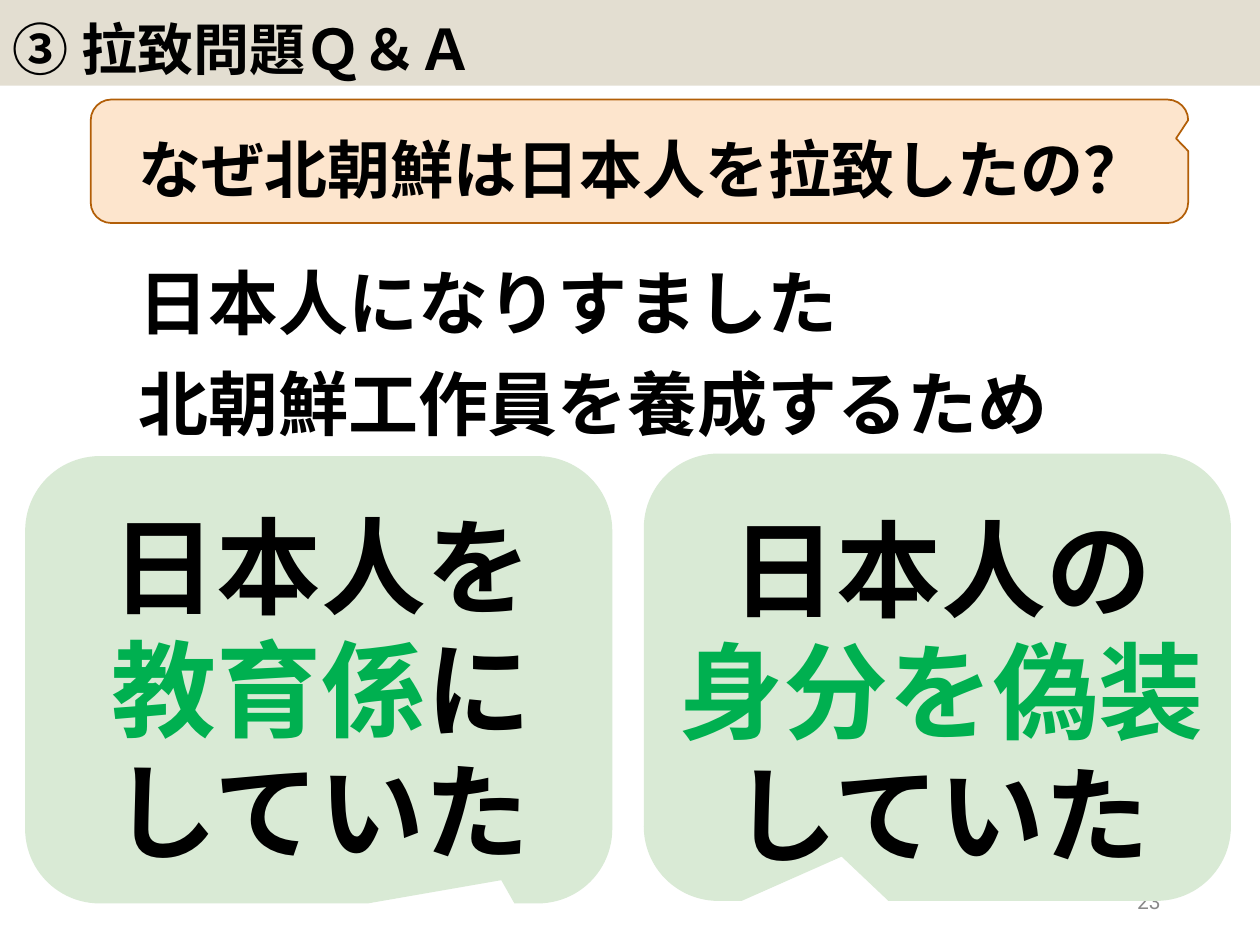
from lxml import etree
from pptx import Presentation
from pptx.dml.color import RGBColor
from pptx.enum.shapes import MSO_SHAPE
from pptx.enum.text import MSO_ANCHOR, MSO_AUTO_SIZE, PP_ALIGN
from pptx.oxml.ns import qn
from pptx.util import Inches, Pt

CALLOUT = MSO_SHAPE.ROUNDED_RECTANGULAR_CALLOUT
TOP, MIDDLE = MSO_ANCHOR.TOP, MSO_ANCHOR.MIDDLE
LEFT, CENTER, RIGHT = PP_ALIGN.LEFT, PP_ALIGN.CENTER, PP_ALIGN.RIGHT
JAPANESE, LATIN = "Noto Sans CJK JP", "Roboto"
BLACK, GREEN, PALE_GREEN = "000000", "00B050", "D9EAD5"


def color(value):
    return RGBColor.from_string(value)


def write(box, lines, size, align=LEFT, spacing=1.0, outline=False,
          font=JAPANESE, bold=True, anchor=TOP):
    frame = box.text_frame
    frame.word_wrap = True
    frame.auto_size = MSO_AUTO_SIZE.NONE
    frame.vertical_anchor = anchor
    frame.text = "\n".join("" for line in lines)
    for para, line in zip(frame.paragraphs, lines):
        para.alignment = align
        para.line_spacing = spacing
        for text, ink in line:
            span = para.add_run()
            span.text = text
            span.font.size = Pt(size)
            span.font.bold = bold
            span.font.name = font
            span.font.color.rgb = color(ink)
            properties = span.font._element
            latin = properties.find(qn("a:latin"))
            east_asian = etree.Element(qn("a:ea"), typeface=font)
            latin.addnext(east_asian)
            if outline:
                edge = etree.Element(qn("a:ln"), w=str(Pt(0.75)))
                fill = etree.SubElement(edge, qn("a:solidFill"))
                etree.SubElement(fill, qn("a:srgbClr"), val="FFFFFF")
                properties.insert(0, edge)


deck = Presentation()
deck.slide_width, deck.slide_height = Inches(10), Inches(7.5)
page = deck.slides.add_slide(deck.slide_layouts[5])

title = page.shapes.title
title.left, title.top = Inches(0), Inches(-0.04)
title.width, title.height = Inches(10), Inches(0.72)
title.fill.solid()
title.fill.fore_color.rgb = color("E3DED1")
write(title, [[("③ 拉致問題Ｑ＆Ａ", BLACK)]], 32, spacing=1.2)

page_number = page.shapes.add_textbox(Inches(7.06), Inches(6.95), Inches(2.25), Inches(0.4))
write(page_number, [[("23", "898989")]], 12, align=RIGHT, font=LATIN, bold=False, anchor=MIDDLE)

question = page.shapes.add_group_shape()
bubble = question.shapes.add_shape(CALLOUT, Inches(0.72), Inches(0.79), Inches(8.71), Inches(0.98))
bubble.adjustments[0], bubble.adjustments[1] = 0.489, -0.185
bubble.shadow.inherit = False
bubble.fill.solid()
bubble.fill.fore_color.rgb = color("FDE5CD")
bubble.line.color.rgb = color("B25E07")
bubble.line.width = Pt(1)
question_text = question.shapes.add_textbox(Inches(1), Inches(0.99), Inches(8.77), Inches(0.71))
write(question_text, [[("なぜ北朝鮮は日本人を拉致したの？", BLACK)]], 36)

reasons = [
    (0.2, 3.62, (0.311, 0.448), (0.42, 3.96, 4.26),
     [[("日本人を", BLACK)], [("教育係", GREEN), ("に", BLACK)], [("していた", BLACK)]]),
    (5.11, 3.6, (-0.163, 0.401), (5.14, 3.98, 4.66),
     [[("日本人の", BLACK)], [("身分を偽装", GREEN), ("していた", BLACK)]]),
]
for left, top, tip, (text_left, text_top, text_width), lines in reasons:
    card = page.shapes.add_shape(CALLOUT, Inches(left), Inches(top), Inches(4.66), Inches(3.55))
    card.adjustments[0], card.adjustments[1] = tip
    card.shadow.inherit = False
    card.fill.solid()
    card.fill.fore_color.rgb = color(PALE_GREEN)
    card.line.fill.background()
    reason = page.shapes.add_textbox(Inches(text_left), Inches(text_top), Inches(text_width), Inches(3.05))
    write(reason, lines, 60, align=CENTER, spacing=Pt(70), outline=True)

answer = page.shapes.add_textbox(Inches(1), Inches(1.88), Inches(7.54), Inches(1.68))
answer_lines = [[("日本人になりすました", BLACK)], [("北朝鮮工作員を養成するため", BLACK)]]
write(answer, answer_lines, 40, spacing=1.2, outline=True)

deck.save("out.pptx")
